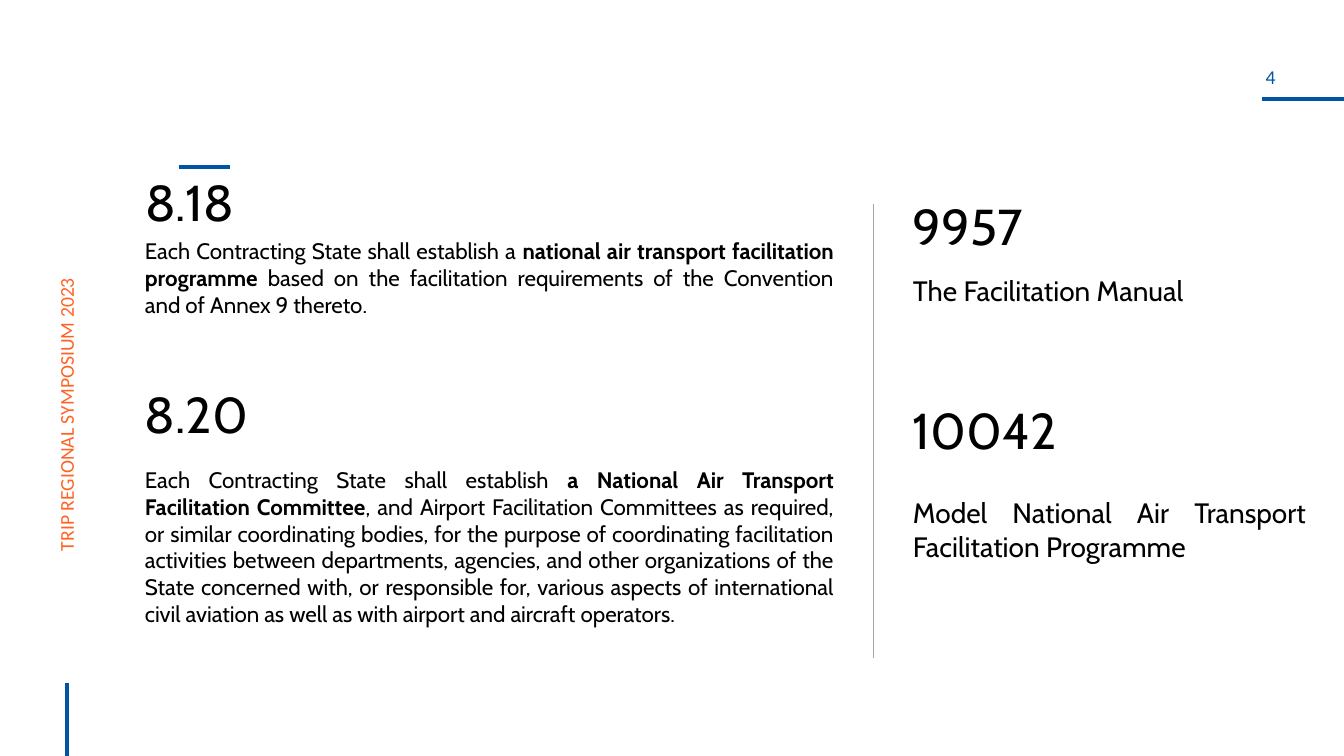
import pptx
import pptx.dml.color
import pptx.enum.shapes
import pptx.enum.text
import pptx.oxml.ns
import pptx.util
from lxml import etree

PX = 914400 / 100.8
BLUE = pptx.dml.color.RGBColor(0x00, 0x54, 0xA3)
ORANGE = pptx.dml.color.RGBColor(0xFF, 0x62, 0x21)
GREY = pptx.dml.color.RGBColor(0xA5, 0xA5, 0xA5)
BLACK = pptx.dml.color.RGBColor(0x00, 0x00, 0x00)
LEFT = pptx.enum.text.PP_ALIGN.LEFT
CENTER = pptx.enum.text.PP_ALIGN.CENTER
JUSTIFY = pptx.enum.text.PP_ALIGN.JUSTIFY

deck = pptx.Presentation()
deck.slide_width = round(1344 * PX)
deck.slide_height = round(756 * PX)
page = deck.slides.add_slide(deck.slide_layouts[5])


def write(spans, left, top, width, height, box=None, size=16, font="Cabin",
          color=BLACK, align=LEFT, wrap=True, inset=True, spacing=None, rotation=0):
    """Place text in a box; every second span is bold."""
    if box is None:
        box = page.shapes.add_textbox(0, 0, 0, 0)
    box.left, box.top, box.width, box.height = (
        round(length * PX) for length in (left, top, width, height))
    box.rotation = rotation
    frame = box.text_frame
    frame.word_wrap = wrap
    frame.auto_size = pptx.enum.text.MSO_AUTO_SIZE.NONE
    frame.vertical_anchor = pptx.enum.text.MSO_ANCHOR.TOP
    if not inset:
        frame.margin_left = frame.margin_right = 0
        frame.margin_top = frame.margin_bottom = 0
    para = frame.paragraphs[0]
    para.alignment = align
    if spacing:
        para.line_spacing = spacing
    for index, text in enumerate(spans):
        span = para.add_run()
        span.text = text
        span.font.name = font
        span.font.size = pptx.util.Pt(size)
        span.font.bold = index % 2 == 1
        span.font.color.rgb = color


# Accent lines and column divider
for x1, y1, x2, y2, color, weight in (
    (1262, 99, 1344, 99, BLUE, 3),
    (67, 683, 67, 756, BLUE, 3),
    (179, 167, 230, 167, BLUE, 3),
    (874, 204, 874, 658, GREY, 0.75),
):
    line = page.shapes.add_connector(
        pptx.enum.shapes.MSO_CONNECTOR.STRAIGHT,
        *(round(length * PX) for length in (x1, y1, x2, y2)))
    line.line.color.rgb = color
    line.line.width = pptx.util.Pt(weight)
    etree.SubElement(line._element.spPr, pptx.oxml.ns.qn("a:effectLst"))

# Page number and event name
write(["4"], 1210, 65, 121, 33, size=14, font="Calibri", color=BLUE,
      align=CENTER, wrap=False, inset=False)
write(["TRIP REGIONAL SYMPOSIUM 2023"], -122, 355, 380, 32, size=14,
      font="Calibri", color=ORANGE, spacing=0.9, rotation=270)

# Numbered headings
for number, left, top, width, box in (
    ("8.18", 135, 166, 137, page.shapes.title),
    ("8.20", 135, 378, 182, None),
    ("9957", 903, 190, 168, None),
    ("10042", 903, 394, 168, None),
):
    write([number], left, top, width, 72, box=box, size=36)

# Standards in the left column
write(["Each Contracting State shall establish a ",
       "national air transport facilitation programme ",
       "based on the facilitation requirements of the Convention and of Annex 9 thereto."],
      135, 232, 709, 92, align=JUSTIFY)
write(["Each Contracting State shall establish ",
       "a National Air Transport Facilitation Committee",
       ", and Airport Facilitation Committees as required, or similar coordinating bodies, "
       "for the purpose of coordinating facilitation activities between departments, "
       "agencies, and other organizations of the State concerned with, or responsible for, "
       "various aspects of international civil aviation as well as with airport and "
       "aircraft operators."],
      135, 461, 709, 173, align=JUSTIFY)

# Documents in the right column
write(["The Facilitation Manual"], 903, 269, 413, 44, size=20, align=JUSTIFY)
write(["Model National Air Transport Facilitation Programme"],
      903, 491, 413, 78, size=20, align=JUSTIFY)

deck.save("out.pptx")
